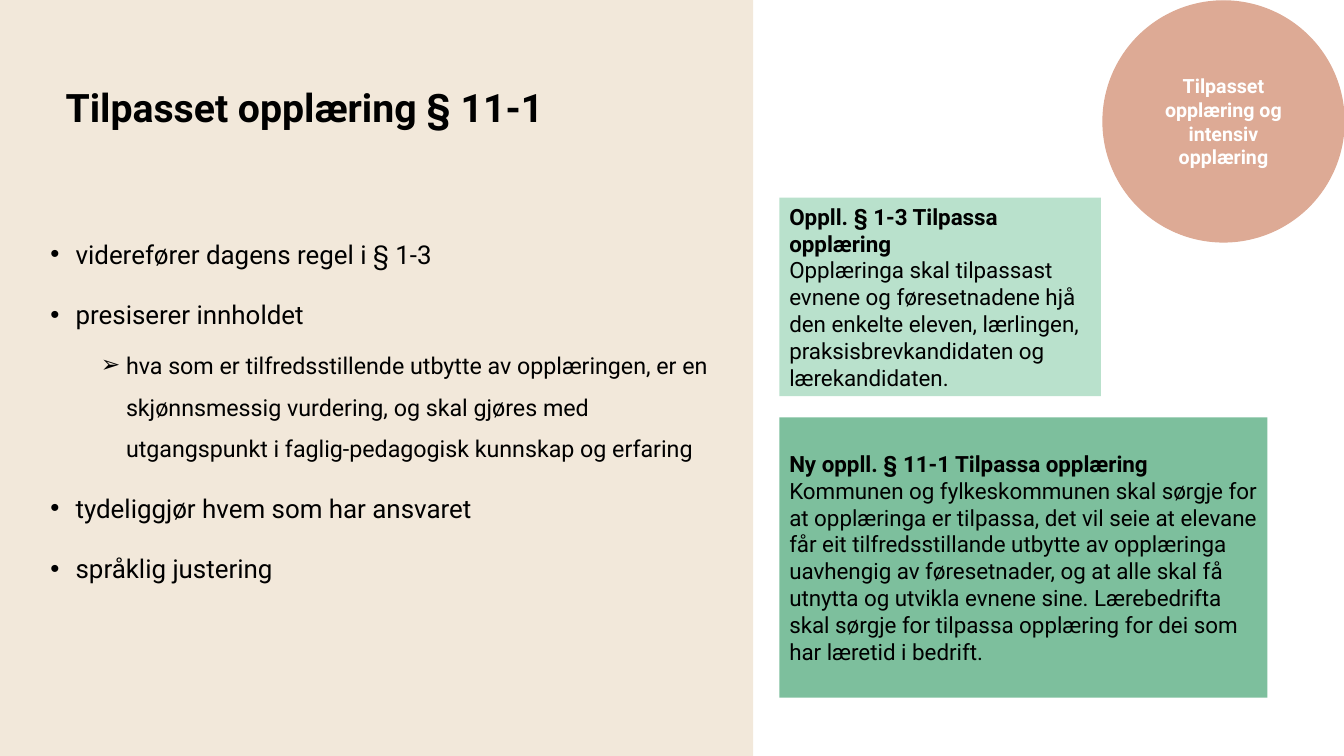
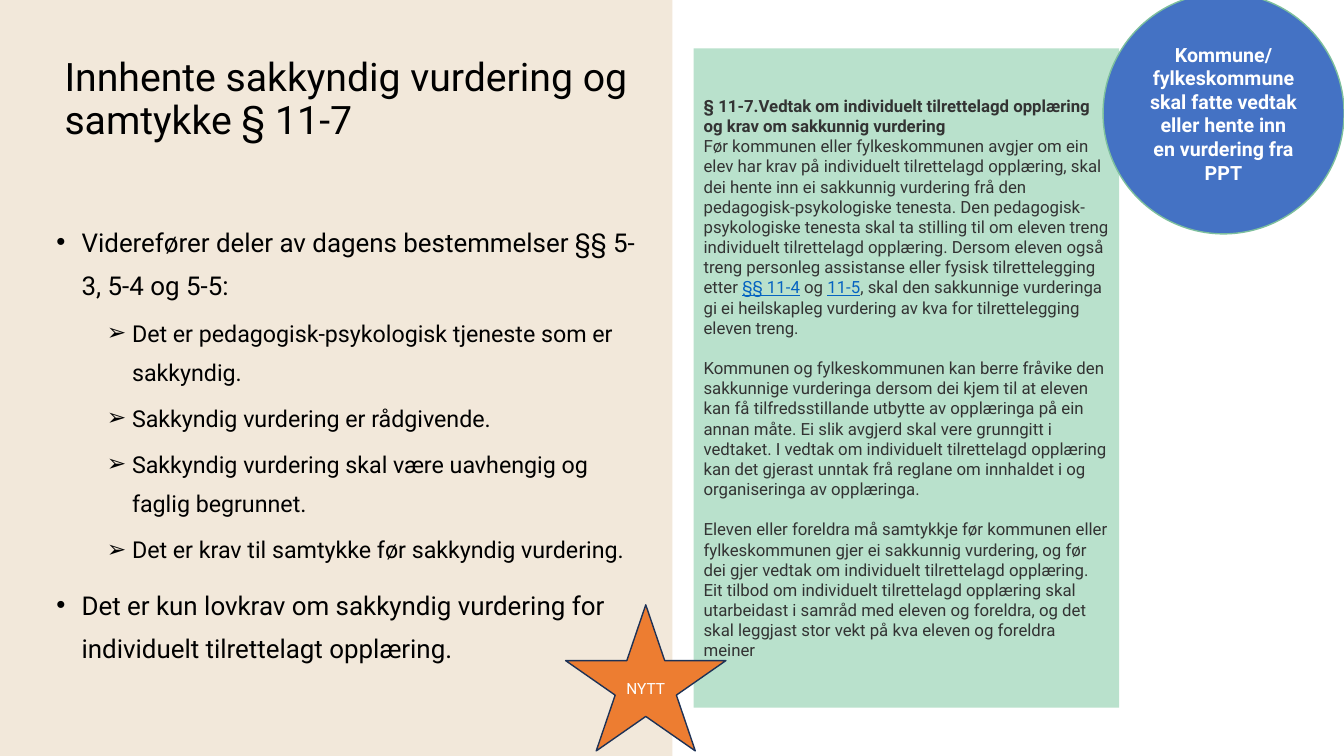
from lxml import etree
from pptx import Presentation
from pptx.dml import color
from pptx.enum import shapes, text
from pptx.oxml import ns
from pptx.util import Inches, Pt

FONT = "Roboto"
SAND, MINT, GREEN = "F2E8DA", "B9E1CC", "7DBF9D"
ROSE, BLUE, ORANGE, NAVY = "DDAA95", "4472C4", "ED7D31", "1E3256"
BLACK, GREY, WHITE, LINK = "000000", "333333", "FFFFFF", "0563C1"
LEFT, MID = text.PP_ALIGN.LEFT, text.PP_ALIGN.CENTER
KIND = shapes.MSO_SHAPE


def rgb(code):
    return color.RGBColor.from_string(code)


def write(para, parts, size=16, ink=BLACK, bold=False, align=LEFT,
          lead=1, before=0):
    para.alignment = align
    para.line_spacing = lead
    para.space_before = Pt(before)
    para.space_after = Pt(0)
    for part in [parts] if isinstance(parts, str) else parts:
        words, tint = (part, ink) if isinstance(part, str) else part
        run = para.add_run()
        run.text = words
        font = run.font
        font.name, font.size, font.bold = FONT, Pt(size), bold
        font.color.rgb = rgb(tint)
        font.underline = tint == LINK


def bullet(para, char, left):
    props = para._p.get_or_add_pPr()
    props.set("marL", str(Inches(left)))
    props.set("indent", str(Inches(-0.25)))
    etree.SubElement(props, ns.qn("a:buFont")).set("typeface", "Arial")
    etree.SubElement(props, ns.qn("a:buChar")).set("char", char)


class Deck:
    def __init__(self):
        self.show = Presentation()
        self.show.slide_width = Inches(13.33)
        self.show.slide_height = Inches(7.5)

    def start(self, width):
        self.slide = self.show.slides.add_slide(self.show.slide_layouts[1])
        panel = self.shape(KIND.RECTANGLE, (0, 0, width, 7.5), SAND)
        self.slide.shapes._spTree.insert(2, panel._element)

    def shape(self, kind, area, fill, line=None):
        item = self.slide.shapes.add_shape(kind, *map(Inches, area))
        item.shadow.inherit = False
        item.fill.solid()
        item.fill.fore_color.rgb = rgb(fill)
        if line:
            item.line.color.rgb = rgb(line)
            item.line.width = Pt(1)
        else:
            item.line.fill.background()
        item.text_frame.word_wrap = True
        item.text_frame.vertical_anchor = text.MSO_ANCHOR.MIDDLE
        return item

    def place(self, item, area):
        item.left, item.top, item.width, item.height = map(Inches, area)
        frame = item.text_frame
        frame.word_wrap = True
        frame.auto_size = text.MSO_AUTO_SIZE.NONE
        return frame

    def title(self, words, area, bold=False):
        frame = self.place(self.slide.shapes.title, area)
        frame.vertical_anchor = text.MSO_ANCHOR.MIDDLE
        write(frame.paragraphs[0], words, size=28, bold=bold, lead=0.9)

    def list(self, items, area, lead):
        frame = self.place(self.slide.placeholders[1], area)
        frame.vertical_anchor = text.MSO_ANCHOR.TOP
        for spot, (level, words) in enumerate(items):
            para = frame.add_paragraph() if spot else frame.paragraphs[0]
            para.level = level
            write(para, words, size=(18.5, 16.6)[level], lead=lead,
                  before=(10, 5)[level])
            bullet(para, "•➢"[level], (0.25, 0.75)[level])

    def law(self, head, paras, area, fill, size=16, ink=BLACK):
        frame = self.shape(KIND.RECTANGLE, area, fill).text_frame
        write(frame.paragraphs[0], head, size=size, ink=ink, bold=True)
        for spot, parts in enumerate(paras):
            write(frame.add_paragraph(), parts, size=size, ink=ink,
                  before=size * 1.2 if spot else 0)

    def badge(self, kind, words, area, fill, line, size=14, bold=True):
        item = self.shape(kind, area, fill, line)
        write(item.text_frame.paragraphs[0], words, size=size, ink=WHITE,
              bold=bold, align=MID)

    def circle(self, words, top, fill, line):
        self.badge(KIND.FLOWCHART_CONNECTOR, words,
                   (10.94, top, 2.39, 2.39), fill, line)


def adapted(deck):
    deck.start(7.47)
    deck.title("Tilpasset opplæring § 11-1", (0.55, 0.36, 6.2, 1.45), bold=True)
    deck.list([
        (0, "viderefører dagens regel i § 1-3"),
        (0, "presiserer innholdet"),
        (1, "hva som er tilfredsstillende utbytte av opplæringen, er en "
            "skjønnsmessig vurdering, og skal gjøres med utgangspunkt i "
            "faglig-pedagogisk kunnskap og erfaring"),
        (0, "tydeliggjør hvem som har ansvaret"),
        (0, "språklig justering"),
    ], (0.4, 2.16, 6.93, 4.11), lead=1.5)
    deck.circle("Tilpasset opplæring og intensiv opplæring", 0.01, ROSE, ROSE)
    deck.law("Oppll. § 1-3 Tilpassa opplæring", [
        "Opplæringa skal tilpassast evnene og føresetnadene hjå den enkelte "
        "eleven, lærlingen, praksisbrevkandidaten og lærekandidaten.",
    ], (7.73, 1.96, 3.19, 1.97), MINT)
    deck.law("Ny oppll. § 11-1 Tilpassa opplæring", [
        "Kommunen og fylkeskommunen skal sørgje for at opplæringa er tilpassa, "
        "det vil seie at elevane får eit tilfredsstillande utbytte av "
        "opplæringa uavhengig av føresetnader, og at alle skal få utnytta og "
        "utvikla evnene sine. Lærebedrifta skal sørgje for tilpassa opplæring "
        "for dei som har læretid i bedrift.",
    ], (7.73, 4.14, 4.84, 2.78), GREEN)


def expert(deck):
    deck.start(6.67)
    deck.title("Innhente sakkyndig vurdering og samtykke § 11-7",
               (0.54, 0.27, 6.5, 1.45))
    deck.list([
        (0, "Viderefører deler av dagens bestemmelser §§ 5-3, 5-4 og 5-5:"),
        (1, "Det er pedagogisk-psykologisk tjeneste som er sakkyndig."),
        (1, "Sakkyndig vurdering er rådgivende."),
        (1, "Sakkyndig vurdering skal være uavhengig og faglig begrunnet."),
        (1, "Det er krav til samtykke før sakkyndig vurdering."),
        (0, "Det er kun lovkrav om sakkyndig vurdering for individuelt "
            "tilrettelagt opplæring."),
    ], (0.46, 2.07, 6.06, 4.76), lead=1.4)
    deck.law("§ 11-7.Vedtak om individuelt tilrettelagd opplæring og krav om "
             "sakkunnig vurdering", [
        ["Før kommunen eller fylkeskommunen avgjer om ein elev har krav på "
         "individuelt tilrettelagd opplæring, skal dei hente inn ei sakkunnig "
         "vurdering frå den pedagogisk-psykologiske tenesta. Den "
         "pedagogisk-psykologiske tenesta skal ta stilling til om eleven treng "
         "individuelt tilrettelagd opplæring. Dersom eleven også treng "
         "personleg assistanse eller fysisk tilrettelegging etter ",
         ("§§ 11-4", LINK), " og ", ("11-5", LINK),
         ", skal den sakkunnige vurderinga gi ei heilskapleg vurdering av kva "
         "for tilrettelegging eleven treng."],
        "Kommunen og fylkeskommunen kan berre fråvike den sakkunnige "
        "vurderinga dersom dei kjem til at eleven kan få tilfredsstillande "
        "utbytte av opplæringa på ein annan måte. Ei slik avgjerd skal vere "
        "grunngitt i vedtaket. I vedtak om individuelt tilrettelagd opplæring "
        "kan det gjerast unntak frå reglane om innhaldet i og organiseringa "
        "av opplæringa.",
        "Eleven eller foreldra må samtykkje før kommunen eller fylkeskommunen "
        "gjer ei sakkunnig vurdering, og før dei gjer vedtak om individuelt "
        "tilrettelagd opplæring. Eit tilbod om individuelt tilrettelagd "
        "opplæring skal utarbeidast i samråd med eleven og foreldra, og det "
        "skal leggjast stor vekt på kva eleven og foreldra meiner",
    ], (6.88, 0.48, 4.22, 6.54), MINT, size=12, ink=GREY)
    deck.circle("Kommune/ fylkeskommune skal fatte vedtak eller hente inn en "
                "vurdering fra PPT", -0.07, BLUE, GREEN)
    deck.badge(KIND.STAR_5_POINT, "NYTT", (5.61, 6, 1.59, 1.45), ORANGE, NAVY,
               size=11, bold=False)


def main():
    deck = Deck()
    adapted(deck)
    expert(deck)
    deck.show.save("out.pptx")


if __name__ == "__main__":
    main()
